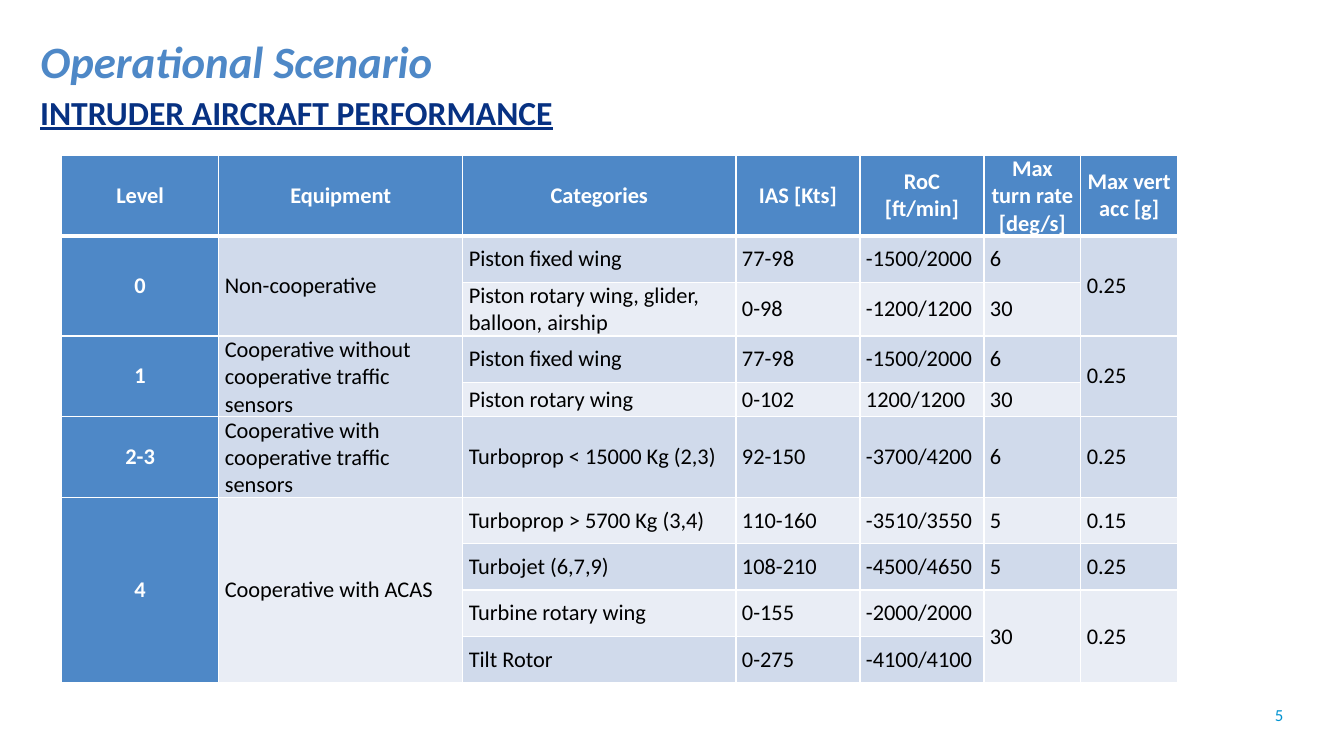
from lxml import etree
from pptx import Presentation
from pptx.dml.color import RGBColor
from pptx.enum.text import MSO_ANCHOR as Anchor, MSO_AUTO_SIZE as AutoSize, PP_ALIGN as Align
from pptx.oxml.ns import qn
from pptx.util import Inches, Pt

BLUE = RGBColor(0x4E, 0x88, 0xC7)
NAVY = RGBColor(0x07, 0x31, 0x82)
CYAN = RGBColor(0x00, 0x93, 0xD1)
DARK_BAND = RGBColor(0xD0, 0xDA, 0xEB)
LIGHT_BAND = RGBColor(0xE9, 0xED, 0xF5)
WHITE = RGBColor(0xFF, 0xFF, 0xFF)
BLACK = RGBColor(0x00, 0x00, 0x00)

COLUMN_WIDTHS = [1.56, 2.42, 2.71, 1.23, 1.23, 0.96, 0.96]
ROW_HEIGHTS = [0.77, 0.46, 0.46, 0.46, 0.31, 0.62, 0.46, 0.46, 0.46, 0.46]
PERFORMANCE = [
    ["Level", "Equipment", "Categories", "IAS [Kts]", "RoC [ft/min]",
     "Max turn rate [deg/s]", "Max vert acc [g]"],
    ["0", "Non-cooperative", "Piston fixed wing", "77-98", "-1500/2000", "6", "0.25"],
    ["", "", "Piston rotary wing, glider, balloon, airship", "0-98", "-1200/1200", "30", ""],
    ["1", "Cooperative without cooperative traffic sensors", "Piston fixed wing",
     "77-98", "-1500/2000", "6", "0.25"],
    ["", "", "Piston rotary wing", "0-102", "1200/1200", "30", ""],
    ["2-3", "Cooperative with cooperative traffic sensors", "Turboprop < 15000 Kg (2,3)",
     "92-150", "-3700/4200", "6", "0.25"],
    ["4", "Cooperative with ACAS", "Turboprop > 5700 Kg (3,4)",
     "110-160", "-3510/3550", "5", "0.15"],
    ["", "", "Turbojet (6,7,9)", "108-210", "-4500/4650", "5", "0.25"],
    ["", "", "Turbine rotary wing", "0-155", "-2000/2000", "30", "0.25"],
    ["", "", "Tilt Rotor", "0-275", "-4100/4100", "", ""],
]
MERGES = [(1, 2, (0, 1, 6)), (3, 4, (0, 1, 6)), (6, 9, (0, 1)), (8, 9, (5, 6))]
TOP_ANCHORED = [(3, 1), (5, 1)]


class ScenarioSlide:
    font_name = "Calibri"

    def __init__(self, presentation):
        self.slide = presentation.slides.add_slide(presentation.slide_layouts[5])

    def style(self, paragraph, size, color, bold=False, align=Align.LEFT):
        paragraph.alignment = align
        font = paragraph.font
        font.name, font.size, font.bold = self.font_name, Pt(size), bold
        font.color.rgb = color
        return font

    def title(self, text, left, top, width, height):
        shape = self.slide.shapes.title
        shape.left, shape.top = Inches(left), Inches(top)
        shape.width, shape.height = Inches(width), Inches(height)
        frame = shape.text_frame
        frame.text = text
        frame.auto_size = AutoSize.NONE
        frame.vertical_anchor = Anchor.TOP
        self.style(frame.paragraphs[0], 32, BLUE, bold=True).italic = True

    def text(self, text, left, top, width, height, size, color,
             bold=False, align=Align.LEFT, underline=False, margin=None, wrap=True):
        box = self.slide.shapes.add_textbox(
            Inches(left), Inches(top), Inches(width), Inches(height))
        frame = box.text_frame
        frame.text = text
        frame.word_wrap = wrap
        if not wrap:
            frame.auto_size = AutoSize.SHAPE_TO_FIT_TEXT
        if margin is not None:
            frame.margin_left = frame.margin_right = Inches(margin)
            frame.margin_top = frame.margin_bottom = Inches(margin)
        self.style(frame.paragraphs[0], size, color, bold, align).underline = underline

    def borders(self, cell, widths):
        properties = cell._tc.get_or_add_tcPr()
        for index, (side, width) in enumerate(widths.items()):
            line = etree.Element(qn(f"a:ln{side}"), w=str(Pt(width)))
            fill = etree.SubElement(line, qn("a:solidFill"))
            etree.SubElement(fill, qn("a:srgbClr"), val=str(WHITE))
            properties.insert(index, line)

    def cell(self, cell, text, row, column):
        heading = row == 0 or column == 0
        cell.text = text
        cell.margin_left = cell.margin_right = Inches(0.06)
        cell.margin_top = cell.margin_bottom = 0
        top_anchored = (row, column) in TOP_ANCHORED
        cell.vertical_anchor = Anchor.TOP if top_anchored else Anchor.MIDDLE
        cell.fill.solid()
        band = DARK_BAND if row % 2 else LIGHT_BAND
        cell.fill.fore_color.rgb = BLUE if heading else band
        self.style(cell.text_frame.paragraphs[0], 16, WHITE if heading else BLACK,
                   heading, Align.CENTER if heading else Align.LEFT)
        self.borders(cell, {"L": 1, "R": 1, "T": 3 if row == 1 else 1,
                            "B": 3 if row == 0 else 1})

    def table(self, rows, left, top):
        frame = self.slide.shapes.add_table(
            len(rows), len(COLUMN_WIDTHS), Inches(left), Inches(top),
            Inches(sum(COLUMN_WIDTHS)), Inches(sum(ROW_HEIGHTS)))
        table = frame.table
        table.horz_banding = False
        for column, width in zip(table.columns, COLUMN_WIDTHS):
            column.width = Inches(width)
        for row, height in zip(table.rows, ROW_HEIGHTS):
            row.height = Inches(height)
        for row, texts in enumerate(rows):
            for column, text in enumerate(texts):
                self.cell(table.cell(row, column), text, row, column)
        for first, last, columns in MERGES:
            for column in columns:
                table.cell(first, column).merge(table.cell(last, column))


def main():
    presentation = Presentation()
    presentation.slide_width = Inches(13.33)
    presentation.slide_height = Inches(7.5)
    scenario = ScenarioSlide(presentation)
    scenario.text("5", 9.73, 6.99, 3, 0.26, 12, CYAN, align=Align.RIGHT, margin=0)
    scenario.table(PERFORMANCE, 0.61, 1.54)
    scenario.title("Operational Scenario", 0.3, 0.28, 8.95, 0.69)
    scenario.text("INTRUDER AIRCRAFT PERFORMANCE", 0.3, 0.86, 5.34, 0.5, 24, NAVY,
                  bold=True, align=Align.JUSTIFY, underline=True, wrap=False)
    presentation.save("out.pptx")


if __name__ == "__main__":
    main()
